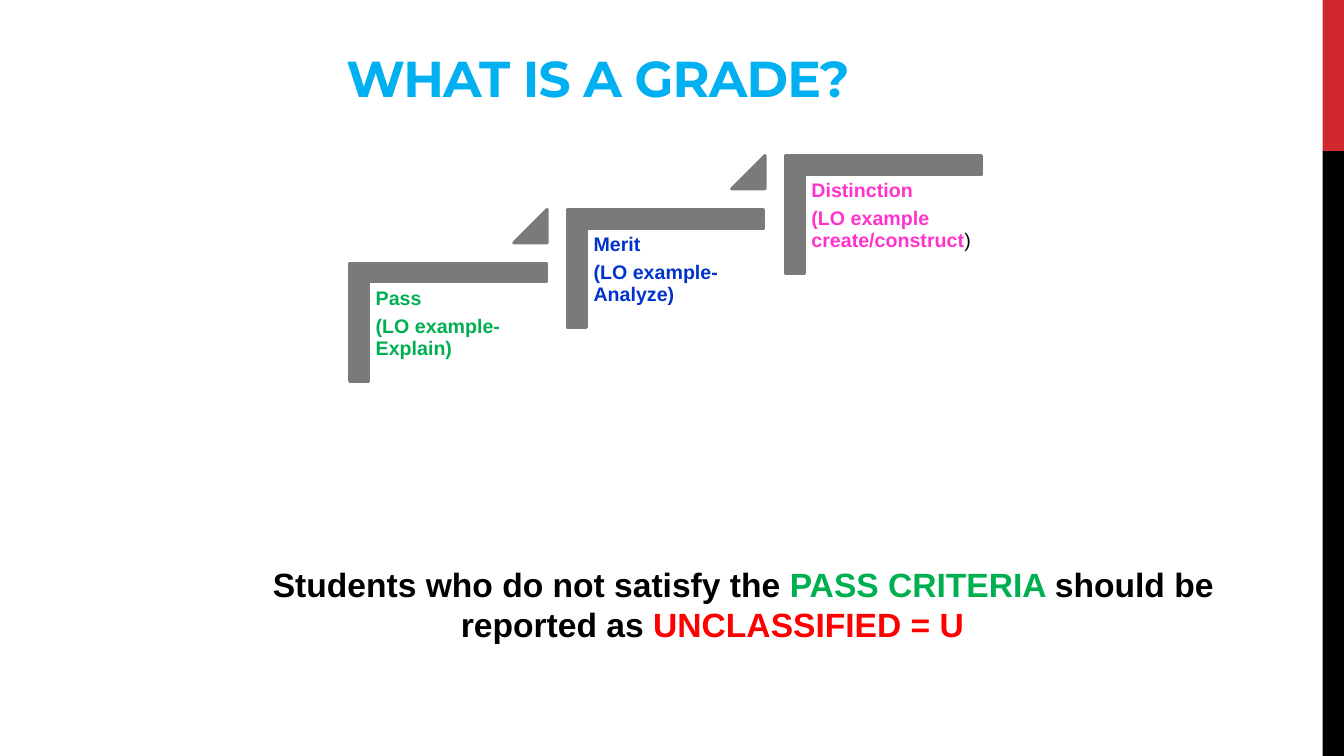
from pptx import Presentation, util as u
from pptx.dml.color import RGBColor
from pptx.enum import shapes, text

# Content
TITLE = "WHAT IS A GRADE?"
GREEN, BLACK, GREY = "00B050", "000000", "7A7A7A"
GRADES = [  # each grade: paragraphs made of (text, colour, bold) runs
    [[("Pass", GREEN, True)], [("(LO example- Explain)", GREEN, True)]],
    [[("Merit", "0033CC", True)], [("(LO example- Analyze)", "0033CC", True)]],
    [[("Distinction", "FF33CC", True)],
     [("(LO example create/construct", "FF33CC", True), (")", BLACK, False)]],
]
NOTE = [[("Students who do not satisfy the ", BLACK, True),
         ("PASS CRITERIA ", GREEN, True),
         ("should be reported as ", BLACK, True),
         ("UNCLASSIFIED = U", "FF0000", True)]]
SIDE_BARS = [(0, 3.81, "D1282E"), (3.81, 15.24, BLACK)]  # top, height, colour

# Geometry in centimetres
STEP_X, STEP_Y = 5.49, -1.36
CORNER = (9.8, 5.64, 2.97, 4.95)
LABEL = (9.32, 7.13, 4.47, 3.94)
TRIANGLE = (12.95, 5.28, 0.84, 0.84)


def colour(value):
    return RGBColor.from_string(value)


def box_at(box, step=0):
    left, top, width, height = box
    return [u.Cm(v) for v in (left + step * STEP_X, top + step * STEP_Y, width, height)]


def add_shape(kind, box, fill, outline=None):
    shape = slide.shapes.add_shape(kind, *box)
    shape.shadow.inherit = False
    shape.fill.solid()
    shape.fill.fore_color.rgb = colour(fill)
    if outline:
        shape.line.color.rgb = colour(outline)
        shape.line.width = u.Pt(2.25)
    else:
        shape.line.fill.background()
    return shape


def write(frame, paragraphs, size, font="Arial", frame_format=None, paragraph_format=None):
    for name, value in {"word_wrap": True, **(frame_format or {})}.items():
        setattr(frame, name, value)
    for index, runs in enumerate(paragraphs):
        paragraph = frame.add_paragraph() if index else frame.paragraphs[0]
        for name, value in (paragraph_format or {}).items():
            setattr(paragraph, name, value)
        for words, run_colour, bold in runs:
            run = paragraph.add_run()
            run.text = words
            for name, value in {"name": font, "size": u.Pt(size), "bold": bold}.items():
                setattr(run.font, name, value)
            run.font.color.rgb = colour(run_colour)


presentation = Presentation()
presentation.slide_width, presentation.slide_height = u.Cm(33.87), u.Cm(19.05)
slide = presentation.slides.add_slide(presentation.slide_layouts[5])

# Bars down the right edge
for top, height, fill in SIDE_BARS:
    add_shape(shapes.MSO_SHAPE.RECTANGLE, box_at((33.33, top, 0.54, height)), fill)

# Title
title = slide.shapes.title
title.left, title.top, title.width, title.height = box_at((1.53, 0.43, 27.08, 2.41))
write(title.text_frame, [[(TITLE, "00B0F0", True)]], 36, "Montserrat",
      {"vertical_anchor": text.MSO_ANCHOR.BOTTOM, "auto_size": text.MSO_AUTO_SIZE.NONE},
      {"alignment": text.PP_ALIGN.CENTER})
title.text_frame.paragraphs[0].runs[0]._r.get_or_add_rPr().set("spc", "-60")

# Staircase of grades
margins = {f"margin_{side}": u.Cm(0.15) for side in ("left", "top", "right", "bottom")}
for step, paragraphs in enumerate(GRADES):
    corner = add_shape(shapes.MSO_SHAPE.CORNER, box_at(CORNER, step), GREY, GREY)
    corner.rotation = 90
    corner.adjustments[0] = corner.adjustments[1] = 0.16
    label = slide.shapes.add_textbox(*box_at(LABEL, step))
    write(label.text_frame, paragraphs, 14, frame_format=margins,
          paragraph_format={"line_spacing": 0.9, "space_after": u.Pt(4.9)})
    if step < len(GRADES) - 1:
        triangle = add_shape(shapes.MSO_SHAPE.ISOSCELES_TRIANGLE,
                             box_at(TRIANGLE, step), GREY, GREY)
        triangle.adjustments[0] = 1

# Note on unclassified students
note = add_shape(shapes.MSO_SHAPE.RECTANGLE, box_at((3.3, 13.13, 29.31, 4.17)), "FFFFFF")
write(note.text_frame, NOTE, 24,
      frame_format={"vertical_anchor": text.MSO_ANCHOR.MIDDLE,
                    "margin_left": u.Cm(1), "margin_right": u.Cm(1)},
      paragraph_format={"alignment": text.PP_ALIGN.CENTER})
# The first line starts further in than the second
note.text_frame.paragraphs[0]._p.get_or_add_pPr().set("indent", str(u.Cm(1.55)))

presentation.save("out.pptx")
